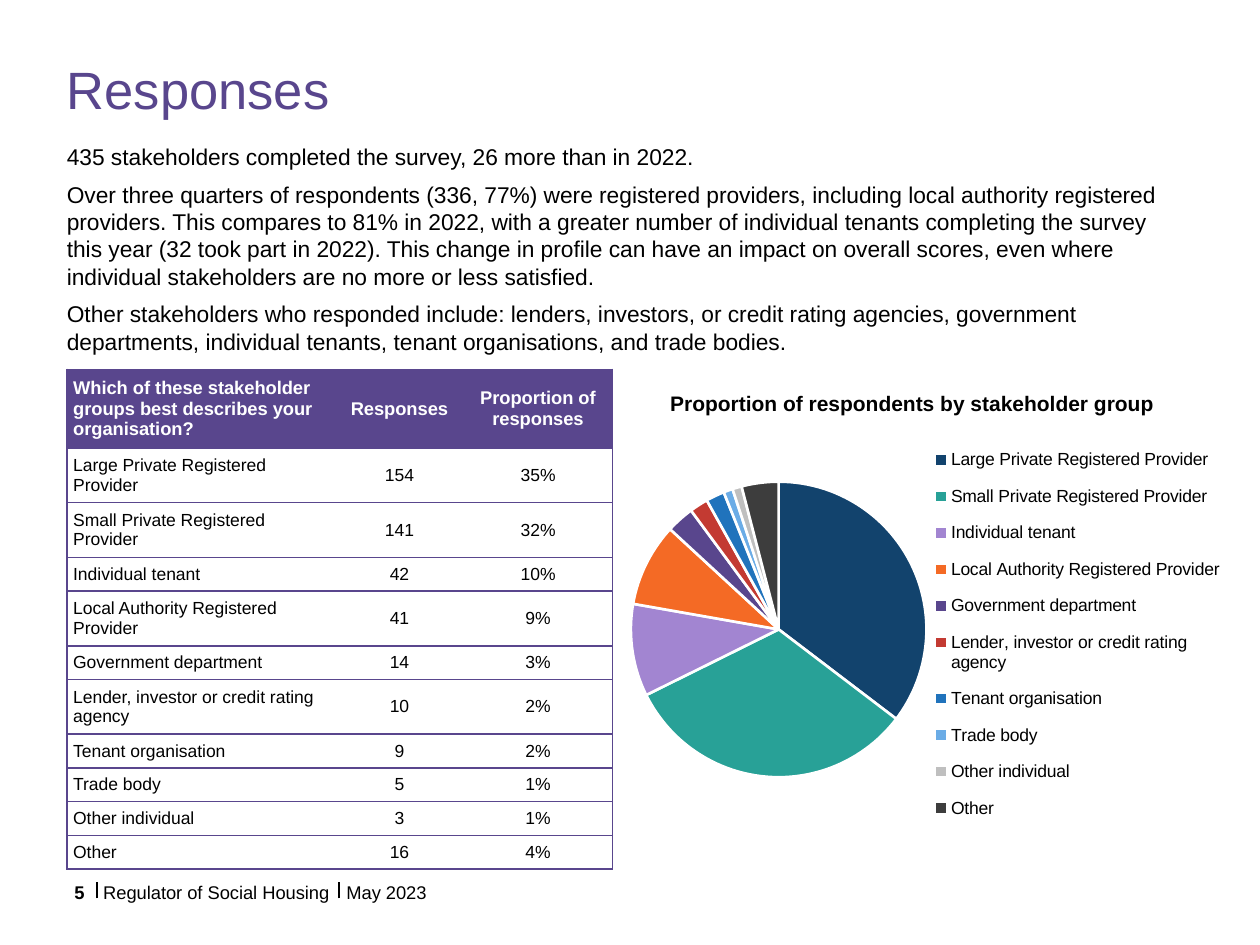
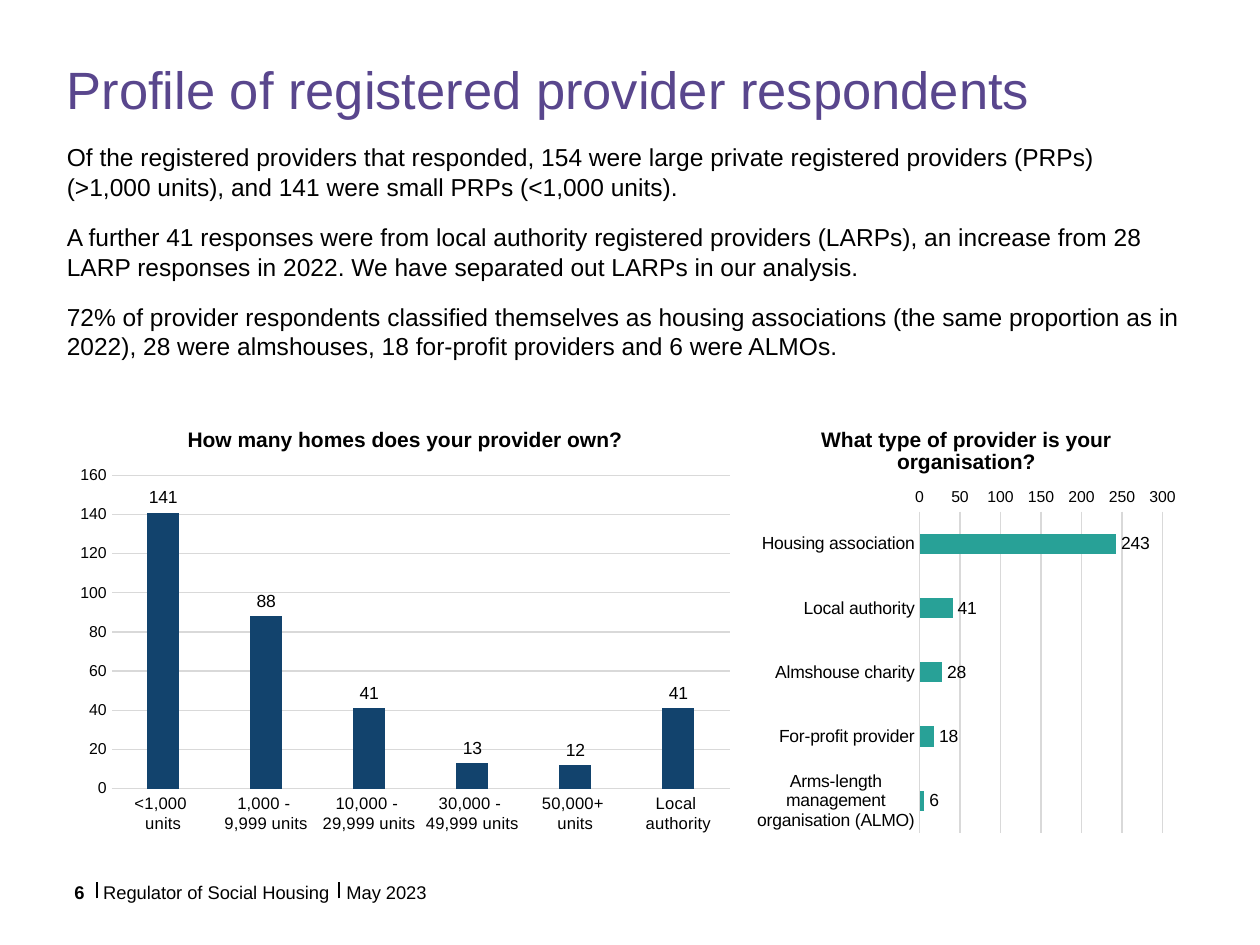
from lxml import etree
from pptx import Presentation
from pptx import util as u
from pptx.chart import data as cd
from pptx.dml.color import RGBColor
from pptx.enum import chart as ce, shapes, text
from pptx.oxml import ns

Pt = u.Pt
FACE = "Arial"
PURPLE, NAVY, TEAL = "59468D", "12436D", "28A197"
BLACK, WHITE, GREY = "000000", "FFFFFF", "D9D9D9"
LEFT, WIDE = 38.2, 638.6
FOOT = 503.3
MID, TOP = text.MSO_ANCHOR.MIDDLE, text.MSO_ANCHOR.TOP
CENTER, START = text.PP_ALIGN.CENTER, text.PP_ALIGN.LEFT
PIE_TINTS = [NAVY, TEAL, "A285D1", "F46A25", PURPLE,
             "C33A32", "2073BC", "6BACE6", "BFBFBF", "3D3D3D"]

HEAD = ("Which of these stakeholder groups best describes your organisation?",
        "Responses", "Proportion of responses")
GROUPS = [
    ("Large Private Registered Provider", 154, 35),
    ("Small Private Registered Provider", 141, 32),
    ("Individual tenant", 42, 10),
    ("Local Authority Registered Provider", 41, 9),
    ("Government department", 14, 3),
    ("Lender, investor or credit rating agency", 10, 2),
    ("Tenant organisation", 9, 2),
    ("Trade body", 5, 1),
    ("Other individual", 3, 1),
    ("Other", 16, 4),
]
HOMES = {
    "<1,000 \nunits": 141,
    "1,000 - \n9,999 units": 88,
    "10,000 - \n29,999 units": 41,
    "30,000 - \n49,999 units": 13,
    "50,000+ \nunits": 12,
    "Local \nauthority": 41,
}
TYPES = {
    "Housing association": 243,
    "Local authority": 41,
    "Almshouse charity": 28,
    "For-profit provider": 18,
    "Arms-length management organisation (ALMO)": 6,
}


def color(hex_code):
    return RGBColor.from_string(hex_code)


def style(font, size, tint=BLACK, bold=False):
    font.name, font.size, font.bold = FACE, Pt(size), bold
    font.color.rgb = color(tint)


def stroke(line, tint, width=0.75):
    line.color.rgb = color(tint)
    line.width = Pt(width)


def edge(cell, side, tint=None):
    """Draw one cell border, or clear it when no tint is given."""
    line = etree.SubElement(cell._tc.get_or_add_tcPr(), ns.qn("a:ln" + side),
                            w=str(Pt(1)))
    if tint:
        fill = etree.SubElement(line, ns.qn("a:solidFill"))
        etree.SubElement(fill, ns.qn("a:srgbClr"), val=tint)
    else:
        etree.SubElement(line, ns.qn("a:noFill"))


def place(part, index, box, inner=False):
    """Fix a chart part at x, y, w, h, as shares of the chart."""
    for old in part.findall(ns.qn("c:layout")):
        part.remove(old)
    layout = etree.Element(ns.qn("c:layout"))
    manual = etree.SubElement(layout, ns.qn("c:manualLayout"))
    rules = [("layoutTarget", "inner")] if inner else []
    rules += [("xMode", "edge"), ("yMode", "edge"), *zip("xywh", box)]
    for tag, val in rules:
        etree.SubElement(manual, ns.qn("c:" + tag), val=str(val))
    part.insert(index, layout)


class Deck:
    def __init__(self):
        self.show = Presentation()
        self.show.slide_width, self.show.slide_height = Pt(720), Pt(540)
        self.slide = None

    def page(self, title, number):
        self.slide = self.show.slides.add_slide(self.show.slide_layouts[6])
        for x in (55.4, 193.7):
            self.rule(x, FOOT + 10, FOOT + 0.7)
        self.label([title], (LEFT, 36.7, WIDE, 56.9), 30, PURPLE, lead=0.9)
        self.label(["May 2023"], (198, FOOT, 169, 8.6), 10.5)
        self.label(["Regulator of Social Housing"], (59, FOOT, 132, 8.6), 10.5)
        self.label([str(number)], (LEFT, FOOT, 14.4, 8.6), 10.5,
                   bold=True, align=CENTER)

    def rule(self, x, start, end):
        line = self.slide.shapes.add_connector(
            shapes.MSO_CONNECTOR.STRAIGHT, Pt(x), Pt(start), Pt(x), Pt(end))
        stroke(line.line, BLACK)
        etree.SubElement(line._element.spPr, ns.qn("a:effectLst"))

    def label(self, paras, box, size, tint=BLACK, bold=False, align=START,
              lead=None, after=0):
        frame = self.slide.shapes.add_textbox(*map(Pt, box)).text_frame
        frame.word_wrap, frame.vertical_anchor = True, TOP
        frame.margin_left = frame.margin_right = 0
        frame.margin_top = frame.margin_bottom = 0
        frame.text = "\n".join(paras)
        for para in frame.paragraphs:
            style(para.font, size, tint, bold)
            para.alignment, para.space_after = align, Pt(after)
            if lead:
                para.line_spacing = lead

    def table(self, rows, spot, widths, heights):
        grid = self.slide.shapes.add_table(
            len(rows), len(widths), *map(Pt, spot),
            Pt(sum(widths)), Pt(sum(heights))).table
        for col, width in zip(grid.columns, widths):
            col.width = Pt(width)
        for r, row in enumerate(rows):
            grid.rows[r].height = Pt(heights[r])
            for c, value in enumerate(row):
                self.cell(grid.cell(r, c), value, r == 0, c == 0,
                          c == len(row) - 1)

    def cell(self, cell, value, head, first, last):
        cell.margin_left = cell.margin_right = Pt(3.6)
        cell.margin_top = cell.margin_bottom = Pt(3.6)
        cell.vertical_anchor = MID
        edge(cell, "L", PURPLE if first else None)
        edge(cell, "R", PURPLE if last else None)
        edge(cell, "T", PURPLE)
        edge(cell, "B", PURPLE)
        cell.fill.solid()
        cell.fill.fore_color.rgb = color(PURPLE if head else WHITE)
        cell.text = str(value)
        para = cell.text_frame.paragraphs[0]
        para.alignment = START if first else CENTER
        style(para.font, 10.5 if head else 10, WHITE if head else BLACK, head)

    def chart(self, kind, title, names, values, box):
        data = cd.CategoryChartData()
        data.categories = names
        data.add_series("Series 1", values)
        chart = self.slide.shapes.add_chart(kind, *map(Pt, box), data).chart
        style(chart.font, 10)
        chart.has_legend = False
        chart.has_title = True
        frame = chart.chart_title.text_frame
        frame.text = title
        style(frame.paragraphs[0].font, 12, bold=True)
        return chart

    def pie(self, title, names, values, box, tints):
        chart = self.chart(ce.XL_CHART_TYPE.PIE, title, names, values, box)
        chart.plots[0].vary_by_categories = True
        for i, tint in enumerate(tints):
            look = chart.plots[0].series[0].points[i].format
            look.fill.solid()
            look.fill.fore_color.rgb = color(tint)
            stroke(look.line, WHITE, 1.5)
        chart.has_legend = True
        legend = chart.legend
        legend.position = ce.XL_LEGEND_POSITION.RIGHT
        legend.include_in_layout = False
        style(legend.font, 10)
        place(legend._element, 1, (0.525, 0.13, 0.475, 0.83))
        area = chart._chartSpace.chart.plotArea
        place(area, 0, (0.053, 0.23, 0.47, 0.611), inner=True)

    def bars(self, kind, title, counts, box, tint, size, top, step):
        chart = self.chart(kind, title, list(counts), list(counts.values()), box)
        plot = chart.plots[0]
        plot.vary_by_categories = False
        plot.gap_width = 219
        fill = plot.series[0].format.fill
        fill.solid()
        fill.fore_color.rgb = color(tint)
        plot.has_data_labels = True
        labels = plot.data_labels
        labels.show_value = True
        labels.position = ce.XL_LABEL_POSITION.OUTSIDE_END
        style(labels.font, 10)
        cats, vals = chart.category_axis, chart.value_axis
        for axis, points in ((cats, size), (vals, 9)):
            axis.major_tick_mark = axis.minor_tick_mark = ce.XL_TICK_MARK.NONE
            style(axis.tick_labels.font, points)
        stroke(cats.format.line, GREY)
        vals.format.line.fill.background()
        vals.has_major_gridlines = True
        stroke(vals.major_gridlines.format.line, GREY)
        vals.minimum_scale, vals.maximum_scale, vals.major_unit = 0, top, step
        return chart


def responses(deck):
    deck.page("Responses", 5)
    deck.label([
        "435 stakeholders completed the survey, 26 more than in 2022.",
        "Over three quarters of respondents (336, 77%) were registered "
        "providers, including local authority registered providers. This "
        "compares to 81% in 2022, with a greater number of individual tenants "
        "completing the survey this year (32 took part in 2022). This change "
        "in profile can have an impact on overall scores, even where "
        "individual stakeholders are no more or less satisfied.",
        "Other stakeholders who responded include: lenders, investors, or "
        "credit rating agencies, government departments, individual tenants, "
        "tenant organisations, and trade bodies.",
    ], (LEFT, 81.4, WIDE, 117.4), 13, after=6)
    rows = [HEAD] + [(name, count, f"{share}%") for name, count, share in GROUPS]
    heights = [40.3] + [29 if len(name) > 25 else 18 for name, *_ in GROUPS]
    deck.table(rows, (LEFT, 211), (153.4, 73.4, 85), heights)
    names, _, shares = zip(*GROUPS)
    deck.pie("Proportion of respondents by stakeholder group", names, shares,
             (341.3, 211.7, 360, 276.5), PIE_TINTS)


def profile(deck):
    deck.page("Profile of registered provider respondents", 6)
    deck.label([
        "Of the registered providers that responded, 154 were large private "
        "registered providers (PRPs) (>1,000 units), and 141 were small PRPs "
        "(<1,000 units).",
        "A further 41 responses were from local authority registered providers "
        "(LARPs), an increase from 28 LARP responses in 2022. We have "
        "separated out LARPs in our analysis.",
        "72% of provider respondents classified themselves as housing "
        "associations (the same proportion as in 2022), 28 were almshouses, "
        "18 for-profit providers and 6 were ALMOs.",
    ], (LEFT, 81.4, WIDE, 141), 14, after=12)
    y, high = 232.6, 248.4
    homes = deck.bars(ce.XL_CHART_TYPE.COLUMN_CLUSTERED,
                      "How many homes does your provider own?", HOMES,
                      (LEFT, y, 386.6, high), NAVY, 9.5, 160, 20)
    homes.plots[0].overlap = -27
    types = deck.bars(ce.XL_CHART_TYPE.BAR_CLUSTERED,
                      "What type of provider is your organisation?", TYPES,
                      (427.7, y, 249.1, high), TEAL, 10, 300, 50)
    types.category_axis.reverse_order = True


def main():
    deck = Deck()
    responses(deck)
    profile(deck)
    deck.show.save("out.pptx")


if __name__ == "__main__":
    main()
